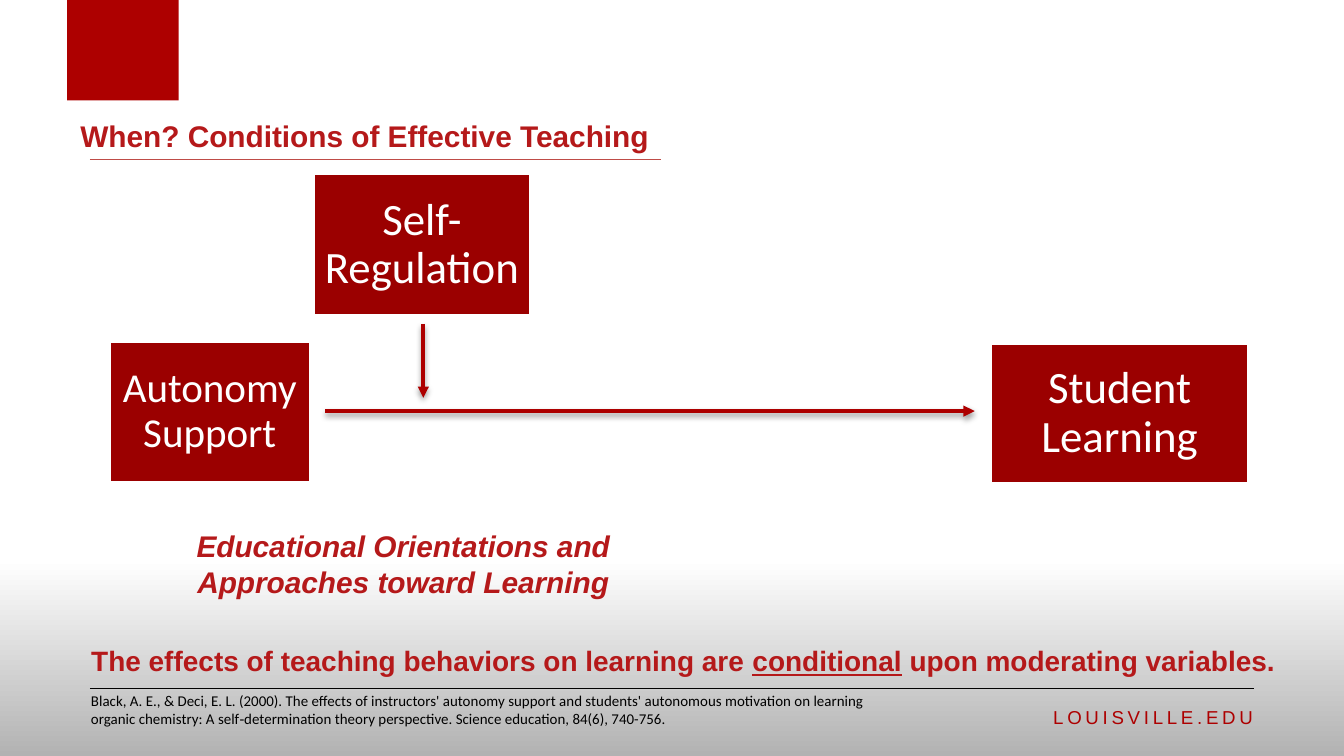
from dataclasses import dataclass

from lxml.etree import SubElement
from pptx import Presentation
from pptx.dml.color import RGBColor
from pptx.enum.shapes import MSO_CONNECTOR, MSO_SHAPE
from pptx.enum.text import MSO_ANCHOR, MSO_AUTO_SIZE, PP_ALIGN
from pptx.oxml.ns import qn
from pptx.util import Cm, Pt


@dataclass(frozen=True)
class Theme:
    red: str = "AD0000"
    box: str = "9B0000"
    heading: str = "B5191A"
    rule: str = "BF4C48"
    white: str = "FFFFFF"
    black: str = "000000"
    grey: str = "B2B2B2"
    title_size: float = 15
    heading_size: float = 16
    footer_size: float = 10
    citation_size: float = 8


theme = Theme()
rgb = RGBColor.from_string


def write(tf, text, size, color, font="Arial", bold=None, italic=None, underline=None,
          align=PP_ALIGN.LEFT, anchor=MSO_ANCHOR.TOP, wrap=True, spacing=None, tracking=None):
    """Fill a text frame; underline names the words to underline."""
    tf.word_wrap = wrap
    tf.auto_size = MSO_AUTO_SIZE.NONE
    tf.vertical_anchor = anchor
    for i, line in enumerate(text.split("\n")):
        p = tf.add_paragraph() if i else tf.paragraphs[0]
        p.alignment = align
        p.line_spacing = spacing
        for part in line.partition(underline) if underline else [line]:
            r = p.add_run()
            r.text = part
            r.font.name, r.font.size = font, Pt(size)
            r.font.bold, r.font.italic = bold, italic
            r.font.underline = part == underline
            r.font.color.rgb = rgb(color)
            if tracking:
                r.font._element.set("spc", str(tracking * 100))


def add_line(x1, y1, x2, y2, color, width, arrow=False):
    """Draw a straight line; an arrow gets a head and a soft shadow."""
    c = s.shapes.add_connector(MSO_CONNECTOR.STRAIGHT, Cm(x1), Cm(y1), Cm(x2), Cm(y2))
    c.line.color.rgb, c.line.width = rgb(color), Pt(width)
    effects = SubElement(c._element.spPr, qn("a:effectLst"))
    if arrow:
        SubElement(c.line._get_or_add_ln(), qn("a:tailEnd"), type="triangle")
        shadow = SubElement(effects, qn("a:outerShdw"), blurRad=str(Pt(3.1)), dist=str(Pt(1.6)),
                            dir="5400000", rotWithShape="0")
        tint = SubElement(shadow, qn("a:srgbClr"), val=theme.black)
        SubElement(tint, qn("a:alpha"), val="38000")


prs = Presentation()
prs.slide_width, prs.slide_height = Cm(25.4), Cm(14.29)
s = prs.slides.add_slide(prs.slide_layouts[5])

# Background: white fading to grey at the bottom
fill = s.background.fill
fill.gradient()
fill.gradient_angle = 270
for stop, position, color in zip(fill.gradient_stops, (0.74, 1), (theme.white, theme.grey)):
    stop.position, stop.color.rgb = position, rgb(color)

# Corner block and rules
sp = s.shapes.add_shape(MSO_SHAPE.RECTANGLE, Cm(1.27), Cm(0), Cm(2.11), Cm(1.9))
sp.shadow.inherit = False
sp.fill.solid()
sp.fill.fore_color.rgb = rgb(theme.red)
sp.line.fill.background()
add_line(1.7, 3.02, 12.5, 3.02, theme.rule, 0.75)
add_line(1.7, 13.02, 23.7, 13.02, theme.black, 0.5)

# Title: the conclusion above the footer
title = s.shapes.title
title.left, title.top, title.width, title.height = Cm(1.47), Cm(11.96), Cm(23.9), Cm(0.97)
write(title.text_frame,
      "The effects of teaching behaviors on learning are conditional upon moderating variables.",
      theme.title_size, theme.heading, bold=True, underline="conditional",
      anchor=MSO_ANCHOR.BOTTOM)

# Heading, caption, citation and footer
texts = [
    ((1.27, 1.98, 12.07, 1.04), "When? Conditions of Effective Teaching",
     dict(size=theme.heading_size, color=theme.heading, bold=True, anchor=MSO_ANCHOR.BOTTOM)),
    ((3.33, 9.78, 8.59, 1.68), "Educational Orientations and\nApproaches toward Learning",
     dict(size=theme.heading_size, color=theme.heading, bold=True, italic=True, wrap=False,
          align=PP_ALIGN.CENTER, anchor=MSO_ANCHOR.BOTTOM)),
    ((1.47, 12.95, 15.67, 0.94),
     "Black, A. E., & Deci, E. L. (2000). The effects of instructors' autonomy support and "
     "students' autonomous motivation on learning organic chemistry: A self‐determination "
     "theory perspective. Science education, 84(6), 740-756.",
     dict(size=theme.citation_size, color=theme.black, font="Calibri")),
    ((18.42, 13.21, 5.51, 0.76), "LOUISVILLE.EDU",
     dict(size=theme.footer_size, color=theme.red, align=PP_ALIGN.RIGHT, tracking=2)),
]
for place, text, style in texts:
    write(s.shapes.add_textbox(*map(Cm, place)).text_frame, text, **style)

# Model boxes
boxes = [
    ("Autonomy Support", 22, (2.06, 6.45, 3.81, 2.67)),
    ("Student Learning", 24, (18.72, 6.48, 4.88, 2.67)),
    ("Self-Regulation", 24, (5.92, 3.28, 4.11, 2.69)),
]
for text, size, place in boxes:
    sp = s.shapes.add_shape(MSO_SHAPE.RECTANGLE, *map(Cm, place))
    sp.shadow.inherit = False
    sp.fill.solid()
    sp.fill.fore_color.rgb = rgb(theme.box)
    sp.line.color.rgb, sp.line.width = rgb(theme.white), Pt(2)
    tf = sp.text_frame
    tf.margin_left = tf.margin_right = tf.margin_top = tf.margin_bottom = Cm(0.15)
    write(tf, text, size, theme.white, font="Calibri", align=PP_ALIGN.CENTER,
          anchor=MSO_ANCHOR.MIDDLE, spacing=0.9)

# Arrows: main effect and moderator
add_line(6.15, 7.77, 18.42, 7.77, theme.red, 2, arrow=True)
add_line(8, 6.12, 8, 7.52, theme.red, 2, arrow=True)

prs.save("out.pptx")
